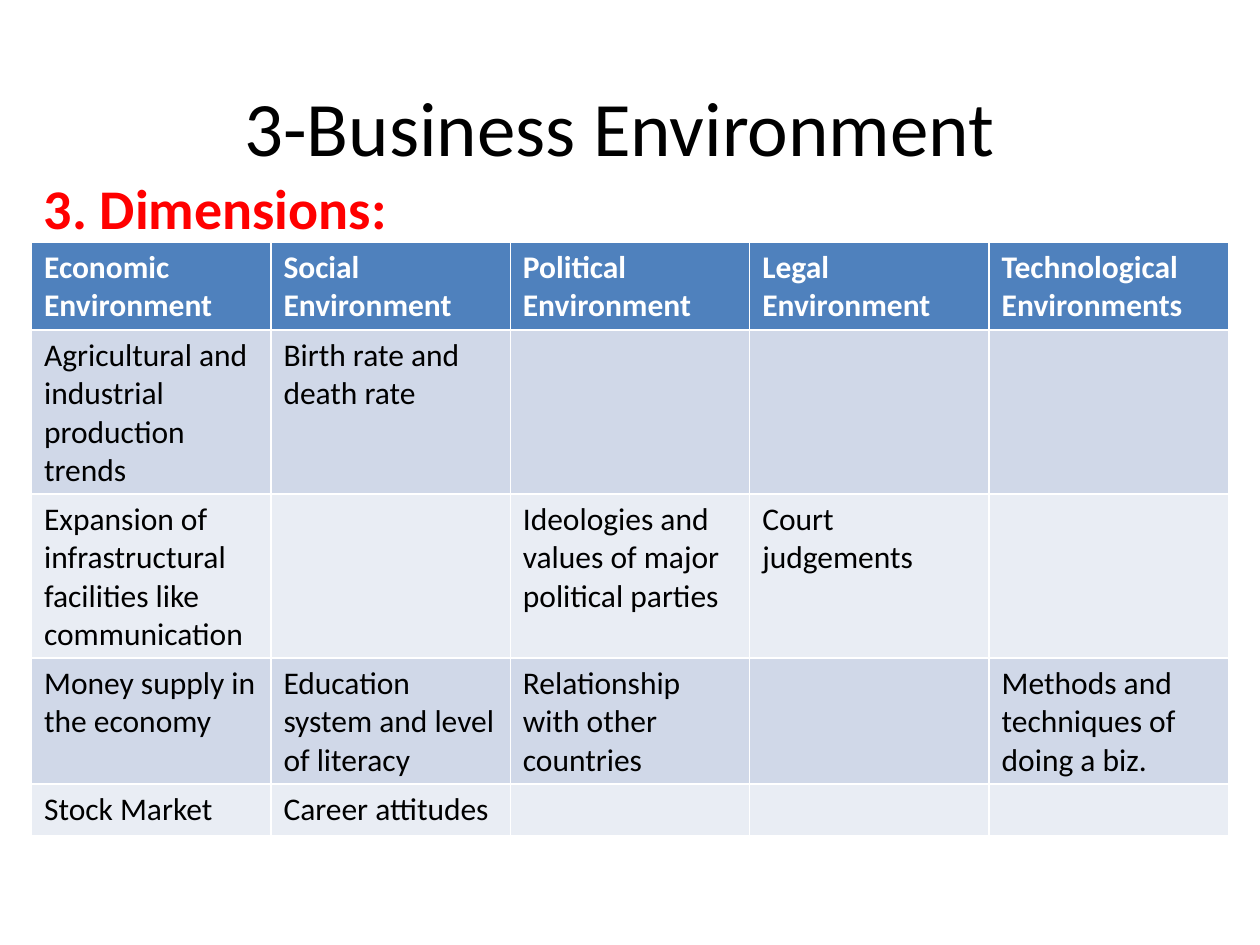
from dataclasses import dataclass
from typing import NamedTuple

from pptx import Presentation
from pptx.dml.color import RGBColor
from pptx.enum.text import MSO_ANCHOR, PP_ALIGN
from pptx.util import Inches, Pt


@dataclass(frozen=True)
class Theme:
    font: str = "Calibri"
    title_size: int = 44
    heading_size: int = 32
    table_size: int = 18
    text: str = "000000"
    heading: str = "FF0000"
    header_text: str = "FFFFFF"
    header_fill: str = "4F81BD"
    bands: tuple[str, str] = ("D0D8E8", "E9EDF4")


class Area(NamedTuple):
    left: float
    top: float
    width: float
    height: float

    def lengths(self) -> list[int]:
        return [Inches(value) for value in self]


class Dimension(NamedTuple):
    """One table column: its heading and the factors below it, top to bottom."""
    name: str
    factors: tuple[str, str, str, str]


THEME = Theme()
TITLE_AREA = Area(0.67, 0.58, 8.5, 0.83)
HEADING_AREA = Area(0.25, 1.33, 9.42, 5.83)
TABLE_AREA = Area(0.25, 1.92, 9.5, 4.71)
MINIMUM_ROW_HEIGHT = 0.41

DIMENSIONS = [
    Dimension("Economic Environment", (
        "Agricultural and industrial production trends",
        "Expansion of infrastructural facilities like communication",
        "Money supply in the economy",
        "Stock Market")),
    Dimension("Social Environment", (
        "Birth rate and death rate", "",
        "Education system and level of literacy",
        "Career attitudes")),
    Dimension("Political Environment", (
        "", "Ideologies and values of major political parties",
        "Relationship with other countries", "")),
    Dimension("Legal Environment", ("", "Court judgements", "", "")),
    Dimension("Technological Environments", (
        "", "", "Methods and techniques of doing a biz.", "")),
]


def style_paragraph(para, size: int, color: str, bold: bool = False) -> None:
    font = para.font
    font.name, font.size, font.bold = THEME.font, Pt(size), bold
    font.color.rgb = RGBColor.from_string(color)


def add_title(page, text: str) -> None:
    title = page.shapes.title
    title.left, title.top, title.width, title.height = TITLE_AREA.lengths()
    frame = title.text_frame
    frame.text = text
    frame.vertical_anchor = MSO_ANCHOR.MIDDLE
    para = frame.paragraphs[0]
    para.alignment = PP_ALIGN.CENTER
    style_paragraph(para, THEME.title_size, THEME.text)


def add_heading(page, text: str) -> None:
    frame = page.shapes.add_textbox(*HEADING_AREA.lengths()).text_frame
    frame.word_wrap = True
    frame.text = text
    para = frame.paragraphs[0]
    para.space_before = Pt(0.2 * THEME.heading_size)
    style_paragraph(para, THEME.heading_size, THEME.heading, bold=True)


def fill_cell(cell, text: str, row: int) -> None:
    is_header = row == 0
    fill = THEME.header_fill if is_header else THEME.bands[(row - 1) % 2]
    cell.fill.solid()
    cell.fill.fore_color.rgb = RGBColor.from_string(fill)
    cell.text = text
    color = THEME.header_text if is_header else THEME.text
    style_paragraph(cell.text_frame.paragraphs[0], THEME.table_size, color, is_header)


def add_dimension_table(page, dimensions: list[Dimension]) -> None:
    row_count = 1 + len(dimensions[0].factors)
    frame = page.shapes.add_table(row_count, len(dimensions), *TABLE_AREA.lengths())
    table = frame.table
    for row in table.rows:
        row.height = Inches(MINIMUM_ROW_HEIGHT)  # rows grow with their text
    frame.height = Inches(TABLE_AREA.height)
    for column, dimension in enumerate(dimensions):
        for row, text in enumerate((dimension.name, *dimension.factors)):
            fill_cell(table.cell(row, column), text, row)


def main() -> None:
    deck = Presentation()
    deck.slide_width, deck.slide_height = Inches(10), Inches(7.5)
    title_only = deck.slide_layouts.get_by_name("Title Only")
    page = deck.slides.add_slide(title_only)
    add_title(page, "3-Business Environment")
    add_heading(page, "3. Dimensions:")
    add_dimension_table(page, DIMENSIONS)
    deck.save("out.pptx")


if __name__ == "__main__":
    main()
